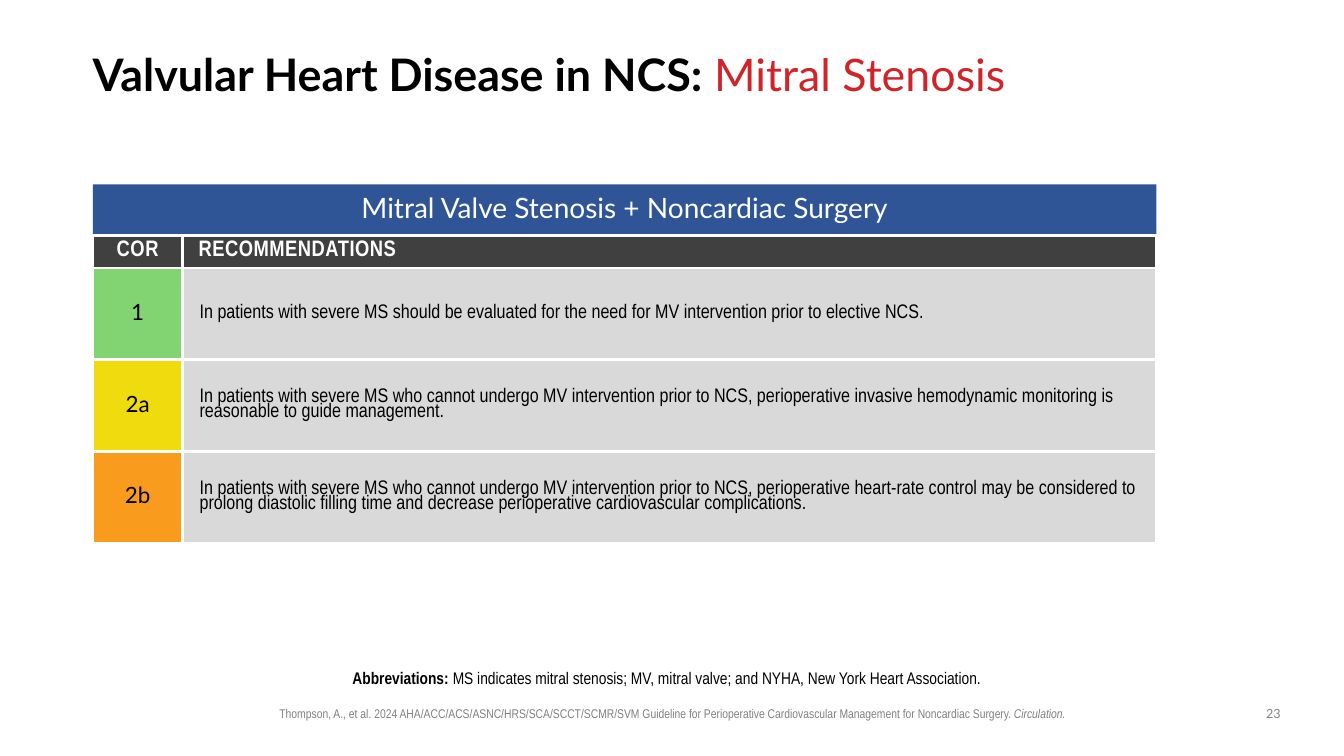
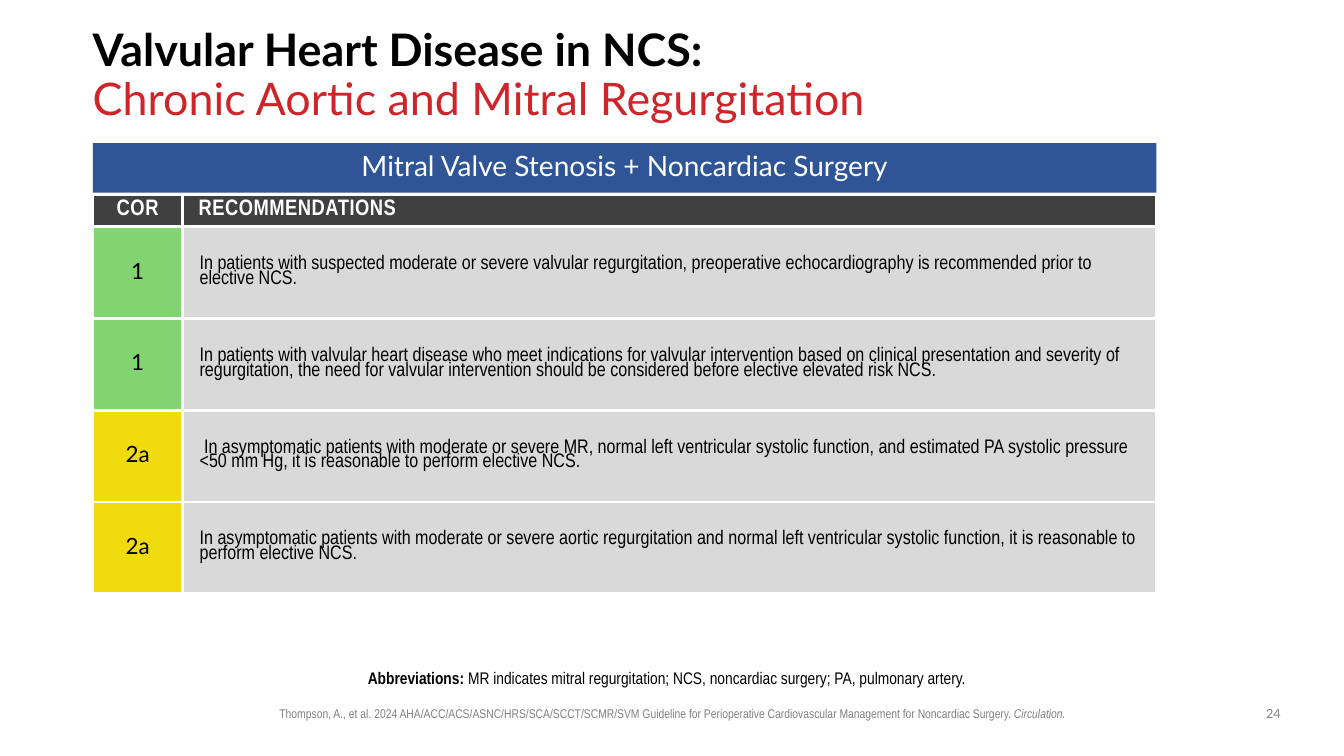
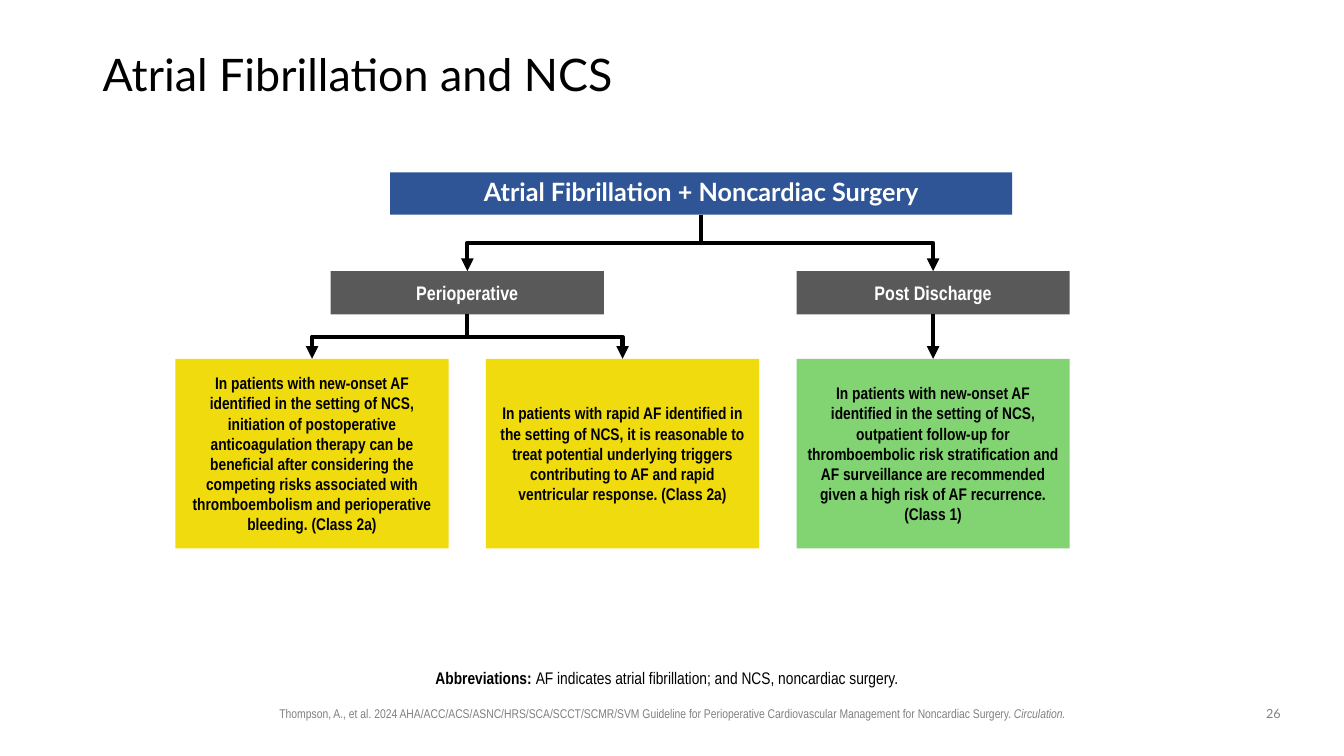
from dataclasses import dataclass

from lxml.etree import SubElement
from pptx import Presentation
from pptx.dml.color import RGBColor
from pptx.enum.shapes import MSO_CONNECTOR as Connector, MSO_SHAPE as Shape
from pptx.enum.text import MSO_ANCHOR as Anchor, PP_ALIGN as Align
from pptx.oxml.ns import qn
from pptx.util import Inches, Pt


@dataclass(frozen=True)
class Theme:
    black: str = "000000"
    white: str = "FFFFFF"
    red: str = "CF2429"
    blue: str = "2F5597"
    header: str = "404040"
    stage: str = "595959"
    panel: str = "D9D9D9"
    muted: str = "808080"
    green: str = "82D472"
    yellow: str = "F0DB0E"
    orange: str = "F99B1D"
    lato: str = "Lato"
    narrow: str = "Arial Narrow"
    title: int = 32
    band: int = 20
    flow_band: int = 18
    grade: int = 16
    body: int = 14
    small: int = 12
    footer: int = 9


THEME = Theme()
CLASS_COLORS = {"1": THEME.green, "2a": THEME.yellow, "2b": THEME.orange}
LEFT = 0.92
TABLE_WIDTH = 10.55
GRADE_WIDTH = 0.89
NO_MARGINS = (0, 0, 0, 0)
CITATION = (
    "Thompson, A., et al. 2024 AHA/ACC/ACS/ASNC/HRS/SCA/SCCT/SCMR/SVM Guideline for "
    "Perioperative Cardiovascular Management for Noncardiac Surgery. "
)
VALVE_TITLE = "Valvular Heart Disease in NCS:"
VALVE_BAND = "Mitral Valve Stenosis + Noncardiac Surgery"

STENOSIS_ROWS = [
    ("1", "In patients with severe MS should be evaluated for the need for MV intervention "
          "prior to elective NCS."),
    ("2a", "In patients with severe MS who cannot undergo MV intervention prior to NCS, "
           "perioperative invasive hemodynamic monitoring is reasonable to guide management."),
    ("2b", "In patients with severe MS who cannot undergo MV intervention prior to NCS, "
           "perioperative heart-rate control may be considered to prolong diastolic filling "
           "time and decrease perioperative cardiovascular complications."),
]
REGURGITATION_ROWS = [
    ("1", "In patients with suspected moderate or severe valvular regurgitation, preoperative "
          "echocardiography is recommended prior to elective NCS."),
    ("1", "In patients with valvular heart disease who meet indications for valvular "
          "intervention based on clinical presentation and severity of regurgitation, the need "
          "for valvular intervention should be considered before elective elevated risk NCS."),
    ("2a", " In asymptomatic patients with moderate or severe MR, normal left ventricular "
           "systolic function, and estimated PA systolic pressure <50 mm Hg, it is reasonable "
           "to perform elective NCS."),
    ("2a", "In asymptomatic patients with moderate or severe aortic regurgitation and normal "
           "left ventricular systolic function, it is reasonable to perform elective NCS."),
]
FIBRILLATION_ADVICE = [
    ("2a", "In patients with new-onset AF identified in the setting of NCS, initiation of "
           "postoperative anticoagulation therapy can be beneficial after considering the "
           "competing risks associated with thromboembolism and perioperative bleeding. "
           "(Class 2a)"),
    ("2a", "In patients with rapid AF identified in the setting of NCS, it is reasonable to "
           "treat potential underlying triggers contributing to AF and rapid ventricular "
           "response. (Class 2a)"),
    ("1", "In patients with new-onset AF identified in the setting of NCS, outpatient "
          "follow-up for thromboembolic risk stratification and AF surveillance are "
          "recommended given a high risk of AF recurrence. (Class 1)"),
]


def font_format(name, size, color=THEME.black, **more):
    return {"name": name, "size": Pt(size), "color": color, **more}


def set_attributes(target, values):
    for name, value in values.items():
        setattr(target, name, value)


def set_margins(target, margins):
    sides = ("margin_left", "margin_top", "margin_right", "margin_bottom")
    set_attributes(target, {side: Inches(m) for side, m in zip(sides, margins)})


def fill_solid(target, color):
    target.fill.solid()
    target.fill.fore_color.rgb = RGBColor.from_string(color)


class Deck:
    def __init__(self, theme):
        self.theme = theme
        self.presentation = Presentation()
        self.presentation.slide_width = Inches(13.33)
        self.presentation.slide_height = Inches(7.5)
        self.slide = None

    def add_runs(self, frame, runs, **layout):
        """Fill the first paragraph with (text, format) runs; "\\n" is a line break."""
        paragraph = frame.paragraphs[0]
        set_attributes(paragraph, layout)
        for text, values in runs:
            if text == "\n":
                paragraph.add_line_break()
                continue
            run = paragraph.add_run()
            run.text = text
            values = dict(values)
            run.font.color.rgb = RGBColor.from_string(values.pop("color"))
            spacing = values.pop("spacing", None)
            set_attributes(run.font, values)
            if spacing:
                run.font._element.set("spc", str(spacing))
        return paragraph

    def text(self, box, runs, anchor=Anchor.TOP, margins=(0.1, 0.05, 0.1, 0.05), **layout):
        frame = self.slide.shapes.add_textbox(*map(Inches, box)).text_frame
        set_attributes(frame, {"word_wrap": True, "vertical_anchor": anchor})
        set_margins(frame, margins)
        self.add_runs(frame, runs, **layout)

    def new_slide(self, number, title_runs, abbreviations):
        theme = self.theme
        self.slide = self.presentation.slides.add_slide(self.presentation.slide_layouts[6])
        citation = font_format(theme.narrow, theme.footer, theme.muted)
        self.text((2.36, 6.95, 8.62, 0.25),
                  [(CITATION, citation), ("Circulation.", {**citation, "italic": True})],
                  alignment=Align.CENTER)
        title = font_format(theme.lato, theme.title)
        self.text((LEFT, 0.4, 11.5, 0.72),
                  [(text, {**title, **changes}) for text, changes in title_runs],
                  Anchor.MIDDLE, NO_MARGINS, line_spacing=0.9)
        note = font_format(theme.narrow, theme.small)
        self.text((1.88, 6.42, 9.57, 0.46),
                  [("Abbreviations: ", {**note, "bold": True}), (abbreviations, note)],
                  Anchor.BOTTOM, (0, 0.05, 0.1, 0.05),
                  alignment=Align.CENTER, line_spacing=0.9)
        self.text((12.42, 6.95, 0.42, 0.26),
                  [(str(number), font_format(theme.lato, theme.footer, theme.muted))],
                  alignment=Align.CENTER)

    def box(self, place, color, text, font, **layout):
        shape = self.slide.shapes.add_shape(Shape.RECTANGLE, *map(Inches, place))
        shape.shadow.inherit = False
        fill_solid(shape, color)
        shape.line.fill.background()
        frame = shape.text_frame
        set_attributes(frame, {"word_wrap": True, "vertical_anchor": Anchor.MIDDLE})
        self.add_runs(frame, [(text, font)], alignment=Align.CENTER, **layout)
        return shape

    def band(self, place, text, size, bold=False):
        font = font_format(self.theme.lato, size, self.theme.white, bold=bold)
        return self.box(place, self.theme.blue, text, font, line_spacing=0.9)

    def cell(self, cell, color, text, font, margins, indent=0, **layout):
        cell.vertical_anchor = Anchor.MIDDLE
        set_margins(cell, margins)
        paragraph = self.add_runs(cell.text_frame, [(text, font)], **layout)
        if indent:
            paragraph._p.get_or_add_pPr().set("marL", str(Inches(indent)))
        properties = cell._tc.get_or_add_tcPr()
        for side in ("a:lnL", "a:lnR", "a:lnT", "a:lnB"):
            border = SubElement(properties, qn(side), w=str(Pt(2.25)))
            solid = SubElement(border, qn("a:solidFill"))
            SubElement(solid, qn("a:srgbClr"), val=self.theme.white)
        fill_solid(cell, color)

    def recommendations(self, top, rows):
        """Draw the blue band and, below it, the table of graded recommendations."""
        theme = self.theme
        self.band((LEFT, top, TABLE_WIDTH, 0.49), VALVE_BAND, theme.band)
        heights = [0.32] + [0.91] * len(rows)
        place = (LEFT, top + 0.51, TABLE_WIDTH, sum(heights))
        table = self.slide.shapes.add_table(len(heights), 2, *map(Inches, place)).table
        set_attributes(table, {"first_row": False, "horz_banding": False})
        for column, width in zip(table.columns, (GRADE_WIDTH, TABLE_WIDTH - GRADE_WIDTH)):
            column.width = Inches(width)
        for row, height in zip(table.rows, heights):
            row.height = Inches(height)

        heading = font_format(theme.narrow, theme.grade, theme.white, bold=True)
        slim, even = (0.1, 0, 0.1, 0.02), (0.05,) * 4
        self.cell(table.cell(0, 0), theme.header, "COR", {**heading, "spacing": 50}, slim,
                  alignment=Align.CENTER)
        self.cell(table.cell(0, 1), theme.header, "RECOMMENDATIONS",
                  {**heading, "spacing": 40}, slim, indent=0.06)
        for index, (grade, advice) in enumerate(rows, start=1):
            self.cell(table.cell(index, 0), CLASS_COLORS[grade], grade,
                      font_format(theme.lato, theme.grade), even,
                      alignment=Align.CENTER, line_spacing=0.8)
            self.cell(table.cell(index, 1), theme.panel, advice,
                      font_format(theme.narrow, theme.body), even, indent=0.12,
                      line_spacing=0.8)

    def arrow(self, upper, lower):
        """Join the bottom of one box to the top of another, with an elbow if needed."""
        start_x, start_y = upper.left + upper.width // 2, upper.top + upper.height
        end_x, end_y = lower.left + lower.width // 2, lower.top
        across, down = abs(end_x - start_x), end_y - start_y
        straight = across < Inches(0.02)
        kind = Connector.STRAIGHT if straight else Connector.ELBOW
        connector = self.slide.shapes.add_connector(kind, start_x, start_y, end_x, end_y)
        connector.begin_connect(upper, 2)
        connector.end_connect(lower, 0)
        properties = connector._element.spPr
        if not straight:
            # An elbow leaves sideways by default; a quarter turn makes it leave downwards.
            transform = properties.find(qn("a:xfrm"))
            transform.attrib.clear()
            set_attributes(connector, {
                "left": (start_x + end_x - down) // 2,
                "top": (start_y + end_y - across) // 2,
                "width": down,
                "height": across,
            })
            transform.set("rot", "5400000" if end_x < start_x else "16200000")
            if end_x > start_x:
                transform.set("flipH", "1")
        connector.line.color.rgb = RGBColor.from_string(self.theme.black)
        connector.line.width = Pt(3)
        SubElement(connector.line._get_or_add_ln(), qn("a:tailEnd"), type="triangle")
        SubElement(properties, qn("a:effectLst"))


def fibrillation_flow(deck):
    theme = deck.theme
    width, pitch, first = 2.71, 3.08, 1.74
    lefts = [first + pitch * index for index in range(3)]
    root = deck.band((3.87, 1.71, 6.17, 0.42), "Atrial Fibrillation + Noncardiac Surgery",
                     theme.flow_band, bold=True)
    stage_font = font_format(theme.narrow, theme.body, theme.white, bold=True)
    perioperative, discharge = [
        deck.box((left, 2.69, width, 0.43), theme.stage, text, stage_font)
        for left, text in ((first + pitch / 2, "Perioperative"), (lefts[2], "Post Discharge"))
    ]
    advice_font = font_format(theme.narrow, theme.small, bold=True)
    advice = [
        deck.box((left, 3.56, width, 1.88), CLASS_COLORS[grade], text, advice_font)
        for left, (grade, text) in zip(lefts, FIBRILLATION_ADVICE)
    ]
    for upper, lower in ((root, perioperative), (root, discharge),
                         (perioperative, advice[0]), (perioperative, advice[1]),
                         (discharge, advice[2])):
        deck.arrow(upper, lower)


def main():
    deck = Deck(THEME)
    bold, red = {"bold": True}, {"color": THEME.red}

    deck.new_slide(23, [(VALVE_TITLE + " ", bold), ("Mitral Stenosis", red)],
                   "MS indicates mitral stenosis; MV, mitral valve; and NYHA, "
                   "New York Heart Association.")
    deck.recommendations(1.83, STENOSIS_ROWS)

    deck.new_slide(24, [(VALVE_TITLE, bold), ("\n", {}),
                        ("Chronic Aortic and Mitral Regurgitation", red)],
                   "MR indicates mitral regurgitation; NCS, noncardiac surgery; "
                   "PA, pulmonary artery.")
    deck.recommendations(1.42, REGURGITATION_ROWS)

    deck.new_slide(26, [(" Atrial Fibrillation and NCS", {})],
                   "AF indicates atrial fibrillation; and NCS, noncardiac surgery.")
    fibrillation_flow(deck)

    deck.presentation.save("out.pptx")


if __name__ == "__main__":
    main()
